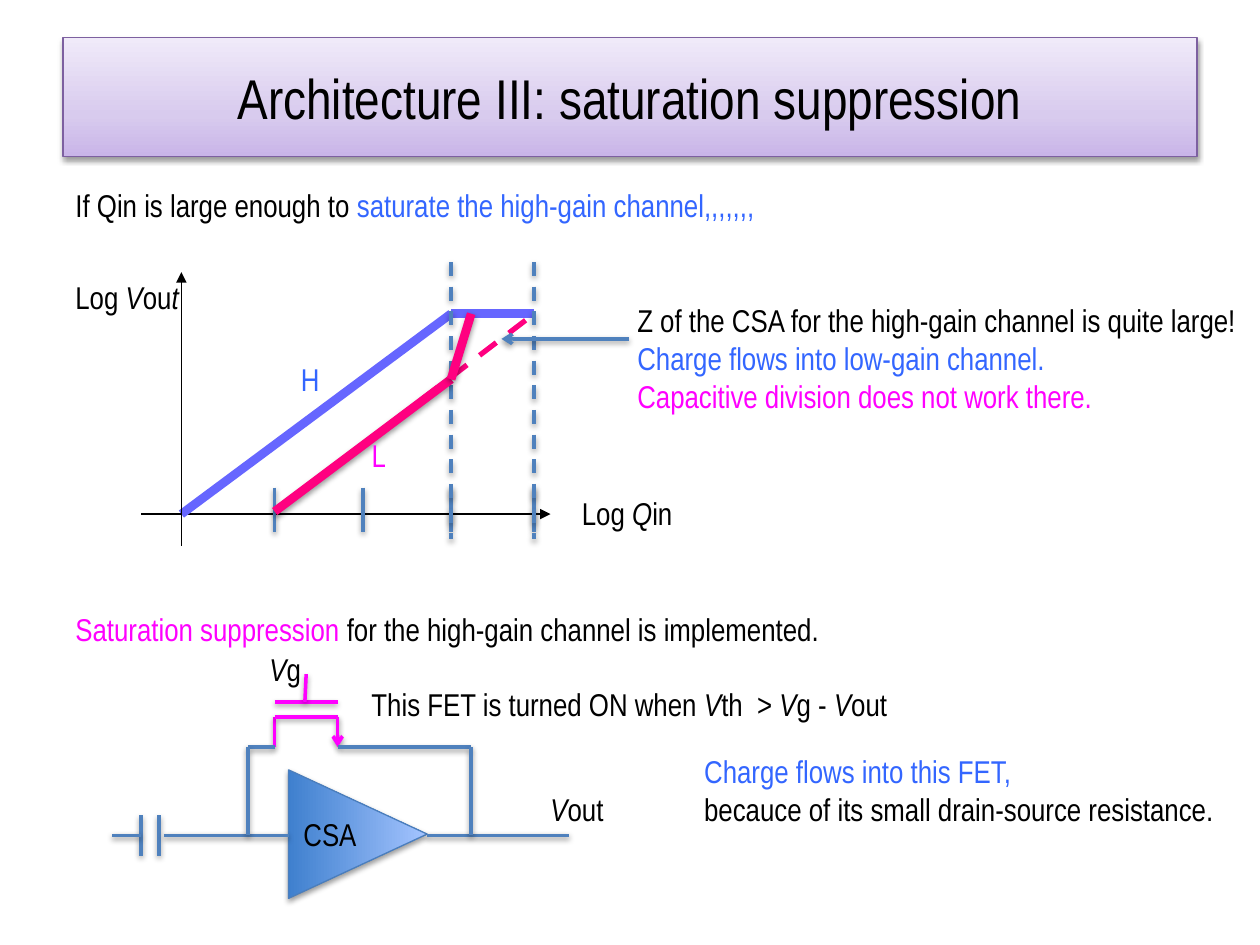
from pptx import Presentation
from pptx.dml.color import RGBColor
from pptx.enum.dml import MSO_LINE
from pptx.enum.shapes import MSO_CONNECTOR, MSO_SHAPE
from pptx.enum.text import MSO_ANCHOR, MSO_AUTO_SIZE, PP_ALIGN
from pptx.oxml import parse_xml
from pptx.oxml.ns import nsdecls, qn
from pptx.util import Inches, Pt

STRAIGHT = MSO_CONNECTOR.STRAIGHT
TRIANGLE = MSO_SHAPE.ISOSCELES_TRIANGLE
DASH = MSO_LINE.DASH
MIDDLE = MSO_ANCHOR.MIDDLE
CENTER = PP_ALIGN.CENTER
GROW = MSO_AUTO_SIZE.SHAPE_TO_FIT_TEXT

FONT = "Arial Narrow"
TITLE_LAYOUT = 5
BLACK = RGBColor(0x00, 0x00, 0x00)
BLUE_TEXT = RGBColor(0x33, 0x66, 0xFF)
MAGENTA = RGBColor(0xFF, 0x00, 0xFF)
HIGH_GAIN = RGBColor(0x66, 0x66, 0xFF)
LOW_GAIN = RGBColor(0xFF, 0x00, 0x80)
STEEL = RGBColor(0x4F, 0x81, 0xBD)
AMPLIFIER_EDGE = RGBColor(0x4B, 0x7E, 0xBC)
PURPLE = RGBColor(0x7D, 0x60, 0xA0)
TITLE_STOPS = [(0, RGBColor(0xC9, 0xB5, 0xE8)), (35, RGBColor(0xD8, 0xCB, 0xEE)),
               (100, RGBColor(0xF0, 0xEA, 0xF9))]
AMPLIFIER_STOPS = [(0, RGBColor(0x3F, 0x80, 0xCE)), (100, RGBColor(0xA4, 0xC4, 0xFF))]


def set_effect(shape, shadow):
    """Give the shape a soft shadow below it, or none at all."""
    outer = ('<a:outerShdw blurRad="40000" dist="20000" dir="5400000" rotWithShape="0">'
             '<a:srgbClr val="000000"><a:alpha val="38000"/></a:srgbClr></a:outerShdw>')
    shape._element.spPr.append(parse_xml(
        f'<a:effectLst {nsdecls("a")}>{outer if shadow else ""}</a:effectLst>'))


def fill_gradient(shape, stops):
    shape.fill.gradient()
    shape.fill.gradient_angle = 90
    stop_list = shape._element.spPr.find(".//" + qn("a:gsLst"))
    for old_stop in list(stop_list):
        stop_list.remove(old_stop)
    for position, color in stops:
        stop_list.append(parse_xml(
            f'<a:gs {nsdecls("a")} pos="{position * 1000}"><a:srgbClr val="{color}"/></a:gs>'))


def outline(shape, color, width):
    shape.line.color.rgb = color
    shape.line.width = Pt(width)


def add_line(slide, box, start, end, color=STEEL, width=2, shadow=True, dash=None, arrow=None):
    """Draw a line between two points measured from the box's top left corner."""
    left, top = box
    line = slide.shapes.add_connector(
        STRAIGHT, Inches(left + start[0]), Inches(top + start[1]),
        Inches(left + end[0]), Inches(top + end[1]))
    outline(line, color, width)
    if dash:
        line.line.dash_style = dash
    if arrow:
        line.line._get_or_add_ln().append(
            parse_xml(f'<a:tailEnd {nsdecls("a")} type="{arrow}"/>'))
    set_effect(line, shadow)


def add_path(slide, box, points, **style):
    for start, end in zip(points, points[1:]):
        add_line(slide, box, start, end, **style)


def add_text(slide, box, place, *paragraphs):
    """Add paragraphs, each a list of (text, color, italic) runs."""
    left, top, width, height = place
    text_box = slide.shapes.add_textbox(
        Inches(box[0] + left), Inches(box[1] + top), Inches(width), Inches(height))
    frame = text_box.text_frame
    frame.word_wrap = False
    frame.auto_size = GROW
    for index, runs in enumerate(paragraphs):
        paragraph = frame.add_paragraph() if index else frame.paragraphs[0]
        for text, color, italic in runs:
            run = paragraph.add_run()
            run.text = text
            run.font.name = FONT
            run.font.size = Pt(18)
            run.font.italic = italic
            run.font.color.rgb = color


def plain(text, color=BLACK):
    return text, color, False


def symbol(text):
    return text, BLACK, True


def add_title(slide, left, top, width, height):
    title = slide.shapes.title
    title.left, title.top = Inches(left), Inches(top)
    title.width, title.height = Inches(width), Inches(height)
    fill_gradient(title, TITLE_STOPS)
    outline(title, PURPLE, 0.75)
    set_effect(title, True)
    title.text_frame.vertical_anchor = MIDDLE
    paragraph = title.text_frame.paragraphs[0]
    paragraph.alignment = CENTER
    run = paragraph.add_run()
    run.text = "Architecture III: saturation suppression"
    run.font.name = FONT
    run.font.size = Pt(32)
    run.font.color.rgb = BLACK


def add_gain_plot(slide, box):
    """Log-log plot of the high-gain (H) and low-gain (L) channels."""
    origin, axis, plateau, knee = 0.32, 2.0, 0.41, 0.93
    ticks = [1.06, 1.76, 2.46, 3.12]
    low_start, saturation, limit = ticks[0], ticks[2], ticks[3]
    axis_style = dict(color=BLACK, width=0.75, shadow=False, arrow="triangle")

    add_line(slide, box, (0, axis), (3.25, axis), **axis_style)
    add_path(slide, box, [(origin, axis), (saturation, plateau), (limit, plateau)],
             color=HIGH_GAIN, width=5, shadow=False)
    add_line(slide, box, (low_start, 1.98), (limit, plateau),
             color=LOW_GAIN, width=3, shadow=False, dash=DASH)
    for tick in ticks:
        add_line(slide, box, (tick, 1.79), (tick, 2.14))
    for boundary in (saturation, limit):
        add_line(slide, box, (boundary, 0), (boundary, 2.2), dash=DASH)
    add_line(slide, box, (origin, 2.25), (origin, 0.08), **axis_style)
    add_path(slide, box, [(low_start, 1.98), (saturation, knee), (2.62, plateau)],
             color=LOW_GAIN, width=5)
    add_line(slide, box, (3.87, 0.61), (2.86, 0.61), arrow="arrow")

    add_text(slide, box, (3.4, 1.79, 0.93, 0.4), [plain("Log "), symbol("Q"), plain("in")])
    add_text(slide, box, (-0.62, 0.08, 1.07, 0.4),
             [plain("Log "), symbol("V"), plain("ou"), symbol("t")])
    add_text(slide, box, (1.17, 0.73, 0.35, 0.4), [plain("H", BLUE_TEXT)])
    add_text(slide, box, (1.73, 1.33, 0.32, 0.4), [plain("L", MAGENTA)])
    add_text(slide, box, (3.84, 0.26, 5, 1.01),
             [plain("Z of the CSA for the high-gain channel is quite large!")],
             [plain("Charge flows into low-gain channel.", BLUE_TEXT)],
             [plain("Capacitive division does not work there.", MAGENTA)])


def add_circuit(slide, box):
    """Charge amplifier with a FET in its feedback loop."""
    left, top = box
    signal, feedback, channel, gate = 1.52, 0.82, 0.58, 0.46
    source, drain = 1.29, 1.79
    loop_left, loop_right = 1.08, 2.85

    amplifier = slide.shapes.add_shape(
        TRIANGLE, Inches(left + 1.44), Inches(top + 0.96), Inches(1.02), Inches(1.1))
    amplifier.rotation = 90
    fill_gradient(amplifier, AMPLIFIER_STOPS)
    outline(amplifier, AMPLIFIER_EDGE, 0.75)
    set_effect(amplifier, True)

    for plate in (0.23, 0.37):
        add_line(slide, box, (plate, 1.36), (plate, 1.68))
    for start, end in ((0, 0.23), (0.41, 1.4), (2.5, 3.63)):
        add_line(slide, box, (start, signal), (end, signal))

    add_path(slide, box, [(source, feedback), (source, channel), (drain, channel)], color=MAGENTA)
    add_line(slide, box, (drain, channel), (drain, feedback), color=MAGENTA, arrow="arrow")
    add_line(slide, box, (source, gate), (drain, gate), color=MAGENTA)
    add_line(slide, box, (1.53, gate), (1.54, 0.24), color=MAGENTA)
    for terminal, corner in ((source, loop_left), (drain, loop_right)):
        add_path(slide, box, [(terminal, feedback), (corner, feedback), (corner, signal)])

    add_text(slide, box, (1.15, 0, 0.46, 0.4), [symbol("V"), plain("g")])
    add_text(slide, box, (1.42, 1.31, 0.63, 0.4), [plain("CSA")])
    add_text(slide, box, (3.38, 1.11, 0.64, 0.4), [symbol("V"), plain("out")])
    add_text(slide, box, (1.96, 0.28, 4.34, 0.4),
             [plain("This FET is turned ON when "), symbol("V"), plain("th  > "),
              symbol("V"), plain("g - "), symbol("V"), plain("out")])
    add_text(slide, box, (4.6, 0.81, 4.29, 0.71),
             [plain("Charge flows into this FET,", BLUE_TEXT)],
             [plain("becauce of its small drain-source resistance.")])


def add_statements(slide, box):
    add_text(slide, box, (0, 0, 5.65, 0.4),
             [plain("If Qin is large enough to "),
              plain("saturate the high-gain channel,,,,,,,", BLUE_TEXT)])
    add_text(slide, box, (0, 3.36, 6.12, 0.4),
             [plain("Saturation suppression ", MAGENTA),
              plain("for the high-gain channel is implemented.")])


def main():
    presentation = Presentation()
    presentation.slide_width = Inches(10)
    presentation.slide_height = Inches(7.5)
    slide = presentation.slides.add_slide(presentation.slide_layouts[TITLE_LAYOUT])
    add_title(slide, 0.5, 0.3, 9, 0.94)
    add_gain_plot(slide, (1.12, 2.08))
    add_statements(slide, (0.5, 1.43))
    add_circuit(slide, (0.89, 5.11))
    presentation.save("out.pptx")


if __name__ == "__main__":
    main()
